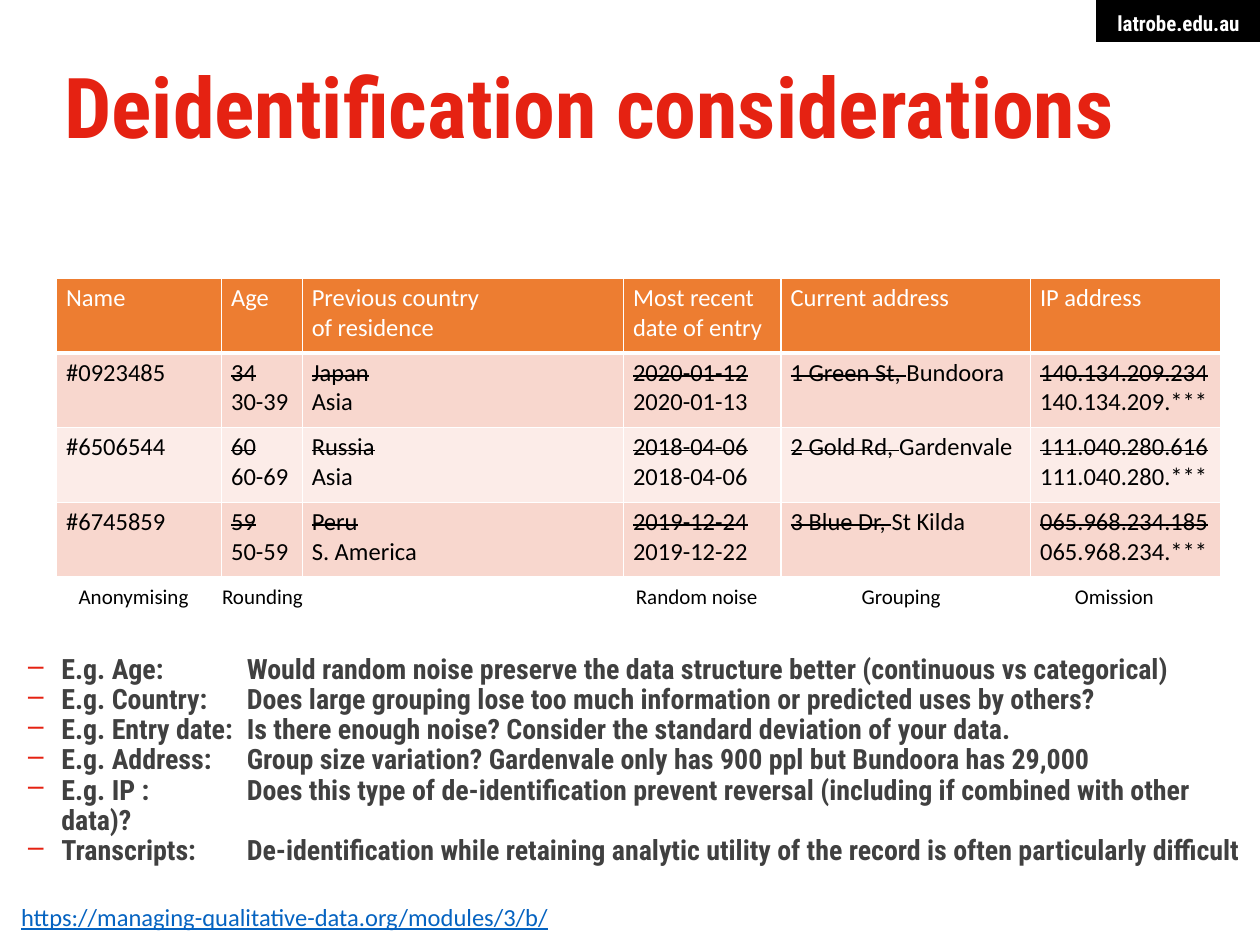
from dataclasses import dataclass
from typing import Optional

from lxml.etree import SubElement
from pptx import Presentation
from pptx.dml.color import RGBColor
from pptx.enum.shapes import MSO_SHAPE
from pptx.enum.text import MSO_ANCHOR, PP_ALIGN
from pptx.oxml.ns import qn
from pptx.util import Pt

BLACK = RGBColor(0x00, 0x00, 0x00)
WHITE = RGBColor(0xFF, 0xFF, 0xFF)
RED = RGBColor(0xE5, 0x22, 0x12)
ORANGE = RGBColor(0xED, 0x7D, 0x31)
PINK = RGBColor(0xF8, 0xD7, 0xCE)
PALE_PINK = RGBColor(0xFC, 0xEC, 0xE8)
GREY = RGBColor(0x40, 0x40, 0x40)
LINK_BLUE = RGBColor(0x05, 0x63, 0xC1)
HEADING_FONT = "Roboto Condensed"
BODY_FONT = "Calibri"


@dataclass
class Entry:
    """A table cell: the struck-out value, then what replaces it."""
    kept: str
    struck: str = ""
    same_line: bool = False


@dataclass
class Technique:
    name: str
    left: float
    width: float


HEADERS = ["Name", "Age", "Previous country\nof residence",
           "Most recent\vdate of entry", "Current address", "IP address"]
COLUMN_WIDTHS = [94.3, 46.1, 183.6, 90, 142.6, 108.7]
ROW_HEIGHT = 42.66
RECORDS = [
    [Entry("#0923485"), Entry("30-39", "34"), Entry("Asia", "Japan"),
     Entry("2020-01-13", "2020-01-12"), Entry("Bundoora", "1 Green St, ", True),
     Entry("140.134.209.***", "140.134.209.234")],
    [Entry("#6506544"), Entry("60-69", "60"), Entry("Asia", "Russia"),
     Entry("2018-04-06", "2018-04-06"), Entry("Gardenvale", "2 Gold Rd, ", True),
     Entry("111.040.280.***", "111.040.280.616")],
    [Entry("#6745859"), Entry("50-59", "59"), Entry("S. America", "Peru"),
     Entry("2019-12-22", "2019-12-24"), Entry("St Kilda", "3 Blue Dr, ", True),
     Entry("065.968.234.***", "065.968.234.185")],
]
TECHNIQUES = [
    Technique("Anonymising ", 37.4, 80.6),
    Technique("Rounding", 118, 64),
    Technique("Random noise", 353.5, 89.3),
    Technique("Grouping", 483, 64),
    Technique("Omission", 604.8, 64),
]
QUESTIONS = [
    "E.g. Age: \tWould random noise preserve the data structure better (continuous vs categorical)",
    "E.g. Country: \tDoes large grouping lose too much information or predicted uses by others?",
    "E.g. Entry date:\tIs there enough noise? Consider the standard deviation of your data.",
    "E.g. Address: \tGroup size variation? Gardenvale only has 900 ppl but Bundoora has 29,000",
    "E.g. IP :\tDoes this type of de-identification prevent reversal "
    "(including if combined with other data)?",
    "Transcripts:\tDe-identification while retaining analytic utility of the record "
    "is often particularly difficult",
]


def format_runs(text_frame, size: float, font_name: str, color: RGBColor,
                bold: bool = False) -> None:
    for paragraph in text_frame.paragraphs:
        for run in paragraph.runs:
            run.font.size = Pt(size)
            run.font.name = font_name
            run.font.color.rgb = color
            run.font.bold = bold


def add_text(slide, text: str, left: float, top: float, width: float, height: float,
             size: float, font_name: str, color: RGBColor, bold: bool = False,
             alignment: Optional[PP_ALIGN] = None):
    text_box = slide.shapes.add_textbox(Pt(left), Pt(top), Pt(width), Pt(height))
    text_frame = text_box.text_frame
    text_frame.word_wrap = True
    text_frame.text = text
    format_runs(text_frame, size, font_name, color, bold)
    for paragraph in text_frame.paragraphs:
        paragraph.alignment = alignment
    return text_frame


def add_dash_bullet(paragraph) -> None:
    properties = paragraph._p.get_or_add_pPr()
    properties.set("marL", str(Pt(28)))
    properties.set("indent", str(Pt(-19)))
    color = SubElement(SubElement(properties, qn("a:buClr")), qn("a:srgbClr"))
    color.set("val", str(RED))
    SubElement(properties, qn("a:buChar")).set("char", "–")
    tab = SubElement(SubElement(properties, qn("a:tabLst")), qn("a:tab"))
    tab.set("pos", str(Pt(134)))
    tab.set("algn", "l")


def style_cell(cell, fill: RGBColor, color: RGBColor, bottom_width: float = 1) -> None:
    format_runs(cell.text_frame, 14, BODY_FONT, color)
    cell.margin_left = cell.margin_right = Pt(5.4)
    cell.margin_top = cell.margin_bottom = Pt(2.7)
    properties = cell._tc.get_or_add_tcPr()
    widths = {"a:lnL": 1, "a:lnR": 1, "a:lnT": 1, "a:lnB": bottom_width}
    for side, width in widths.items():
        line = SubElement(properties, qn(side), w=str(Pt(width)))
        line_fill = SubElement(line, qn("a:solidFill"))
        SubElement(line_fill, qn("a:srgbClr"), val=str(WHITE))
    cell.fill.solid()
    cell.fill.fore_color.rgb = fill


def write_entry(cell, entry: Entry) -> None:
    text_frame = cell.text_frame
    if not entry.struck:
        text_frame.text = entry.kept
        return
    text_frame.text = entry.struck
    struck_run = text_frame.paragraphs[0].runs[0]
    struck_run.font._element.set("strike", "sngStrike")
    if entry.same_line:
        text_frame.paragraphs[0].add_run().text = entry.kept
    else:
        text_frame.add_paragraph().text = entry.kept


def add_records_table(slide) -> None:
    row_count = len(RECORDS) + 1
    table = slide.shapes.add_table(
        row_count, len(HEADERS), Pt(32.4), Pt(159.1),
        Pt(sum(COLUMN_WIDTHS)), Pt(ROW_HEIGHT * row_count)).table
    table.horz_banding = False
    for column, width in zip(table.columns, COLUMN_WIDTHS):
        column.width = Pt(width)
    for row in table.rows:
        row.height = Pt(ROW_HEIGHT)
    for column_index, header in enumerate(HEADERS):
        cell = table.cell(0, column_index)
        cell.text_frame.text = header
        style_cell(cell, ORANGE, WHITE, bottom_width=3)
    for row_index, record in enumerate(RECORDS, start=1):
        for column_index, entry in enumerate(record):
            cell = table.cell(row_index, column_index)
            write_entry(cell, entry)
            style_cell(cell, PINK if row_index % 2 else PALE_PINK, BLACK)


def add_site_tag(slide) -> None:
    shape = slide.shapes.add_shape(MSO_SHAPE.RECTANGLE, Pt(626.4), Pt(0), Pt(93.6), Pt(24))
    shape.shadow.inherit = False
    shape.fill.solid()
    shape.fill.fore_color.rgb = BLACK
    shape.line.fill.background()
    text_frame = shape.text_frame
    text_frame.word_wrap = False
    text_frame.margin_left = text_frame.margin_right = Pt(11.5)
    text_frame.margin_top, text_frame.margin_bottom = Pt(5.8), Pt(3.6)
    text_frame.vertical_anchor = MSO_ANCHOR.TOP
    text_frame.text = "latrobe.edu.au"
    text_frame.paragraphs[0].alignment = PP_ALIGN.RIGHT
    format_runs(text_frame, 12, HEADING_FONT, WHITE, bold=True)


def set_title(slide) -> None:
    title = slide.shapes.title
    title.left, title.top, title.width, title.height = Pt(36.7), Pt(33.8), Pt(646.6), Pt(66.2)
    text_frame = title.text_frame
    text_frame.margin_left = text_frame.margin_right = 0
    text_frame.margin_top = text_frame.margin_bottom = 0
    text_frame.vertical_anchor = MSO_ANCHOR.TOP
    text_frame.text = "Deidentification considerations"
    text_frame.paragraphs[0].alignment = PP_ALIGN.LEFT
    text_frame.paragraphs[0].line_spacing = Pt(55)
    format_runs(text_frame, 48, HEADING_FONT, RED, bold=True)


def main() -> None:
    presentation = Presentation()
    presentation.slide_width, presentation.slide_height = Pt(720), Pt(540)
    slide = presentation.slides.add_slide(presentation.slide_layouts[5])

    # Header
    add_site_tag(slide)
    set_title(slide)

    # Records, with the technique named under each column
    add_records_table(slide)
    for technique in TECHNIQUES:
        add_text(slide, technique.name, technique.left, 329.8, technique.width, 21.6,
                 12, BODY_FONT, BLACK, alignment=PP_ALIGN.CENTER)

    # Questions to consider
    questions = add_text(slide, "\n".join(QUESTIONS), 0, 370.8, 720, 112.3,
                         16, HEADING_FONT, GREY, bold=True)
    for paragraph in questions.paragraphs:
        add_dash_bullet(paragraph)
        paragraph.level = 1
        paragraph.line_spacing = 0.9

    # Source address
    address = add_text(slide, "https://managing-qualitative-data.org/modules/3/b/",
                       5, 511.9, 360, 24.5, 14, BODY_FONT, LINK_BLUE)
    address.paragraphs[0].runs[0].font.underline = True

    presentation.save("out.pptx")


if __name__ == "__main__":
    main()
